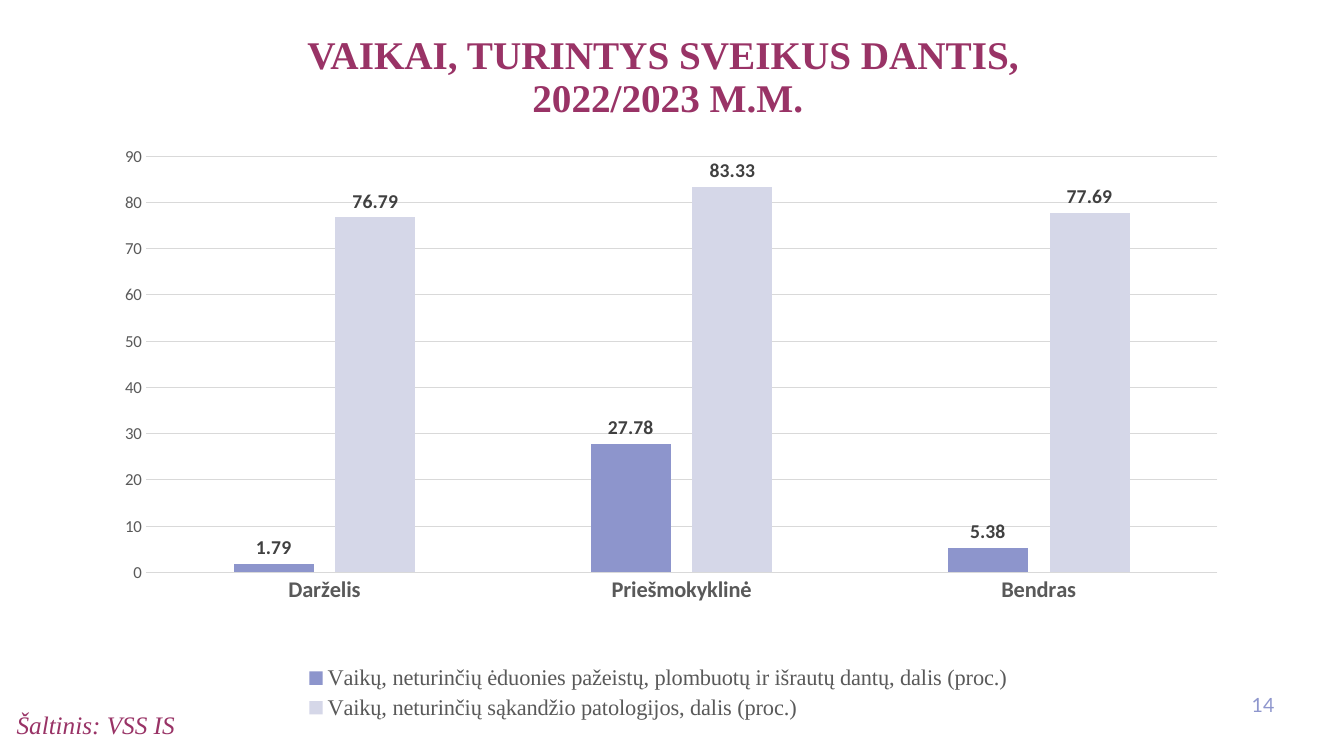
from lxml.etree import SubElement as Sub
from pptx import Presentation
from pptx.chart.data import CategoryChartData as Data
from pptx.dml.color import RGBColor as Rgb
from pptx.enum.chart import XL_CHART_TYPE as Kind, XL_LABEL_POSITION as Spot
from pptx.enum.chart import XL_LEGEND_POSITION as Side, XL_TICK_MARK as Tick
from pptx.enum.text import MSO_ANCHOR as Anchor, PP_ALIGN as Align
from pptx.oxml.ns import qn
from pptx.util import Inches, Pt

HUES = {"plum": "993366", "blue": "8D95CC", "pale": "D5D7E8", "page": "8E96CD",
        "grey": "595959", "dark": "404040", "rule": "D9D9D9", "black": "000000"}
SERIF, SANS = "Times New Roman", "Calibri"
COLS, ROWS = 160, 90


class Deck:
    def __init__(self):
        self.file = Presentation()
        self.file.slide_width, self.file.slide_height = Inches(13.33), Inches(7.5)
        self.slide = self.file.slides.add_slide(self.file.slide_layouts[6])

    def area(self, col, row, wide, high):
        across = self.file.slide_width / COLS
        down = self.file.slide_height / ROWS
        return [round(n) for n in (col * across, row * down, wide * across, high * down)]

    def style(self, font, face, size, hue, bold=False, italic=False):
        font.name, font.size, font.bold, font.italic = face, Pt(size), bold, italic
        font.color.rgb = Rgb.from_string(HUES[hue])

    def rule(self, line):
        line.color.rgb = Rgb.from_string(HUES["rule"])
        line.width = Pt(0.75)

    def text(self, box, words, look, align=Align.LEFT, anchor=Anchor.TOP, lead=1.0, **more):
        frame = self.slide.shapes.add_textbox(*self.area(*box)).text_frame
        frame.word_wrap = True
        frame.vertical_anchor = anchor
        frame.text = words
        for para in frame.paragraphs:
            para.alignment, para.line_spacing = align, lead
            for run in para.runs:
                self.style(run.font, *look, **more)

    def bars(self, box, cats, rows, plot):
        data = Data()
        data.categories = cats
        for name, _, vals in rows:
            data.add_series(name, vals)
        chart = self.slide.shapes.add_chart(Kind.COLUMN_CLUSTERED, *self.area(*box), data).chart
        self.style(chart.font, SANS, 10, "black")
        chart.has_title = False
        chart.has_legend = True
        chart.legend.position = Side.BOTTOM
        chart.legend.include_in_layout = False
        self.style(chart.legend.font, SERIF, 16, "grey")
        self.axes(chart)
        group = chart.plots[0]
        group.gap_width, group.overlap, group.vary_by_categories = 219, -27, False
        for part, (_, hue, _) in zip(group.series, rows):
            part.format.fill.solid()
            part.format.fill.fore_color.rgb = Rgb.from_string(HUES[hue])
            part.invert_if_negative = False
            tags = part.data_labels
            tags.show_value = True
            tags.position = Spot.OUTSIDE_END
            self.style(tags.font, SANS, 14, "dark", bold=True)
        self.place(chart, plot)

    def axes(self, chart):
        cat, val = chart.category_axis, chart.value_axis
        for axis in (cat, val):
            axis.major_tick_mark = axis.minor_tick_mark = Tick.NONE
        self.style(cat.tick_labels.font, SANS, 16, "grey", bold=True)
        self.style(val.tick_labels.font, SANS, 12, "grey")
        self.rule(cat.format.line)
        self.rule(val.major_gridlines.format.line)
        val.format.line.fill.background()
        val.minimum_scale, val.maximum_scale, val.major_unit = 0, 90, 10

    def place(self, chart, plot):
        zone = chart.element.find(".//" + qn("c:plotArea"))
        for old in zone.findall(qn("c:layout")):
            zone.remove(old)
        frame = Sub(zone, qn("c:layout"))
        zone.insert(0, frame)
        hand = Sub(frame, qn("c:manualLayout"))
        marks = [("layoutTarget", "inner"), ("xMode", "edge"), ("yMode", "edge")]
        marks += [(key, str(part / 100)) for key, part in zip("xywh", plot)]
        for key, val in marks:
            Sub(hand, qn("c:" + key)).set("val", val)


def main():
    deck = Deck()
    deck.bars((10, 16.3, 136.7, 70), ("Darželis", "Priešmokyklinė", "Bendras"), (
        ("Vaikų, neturinčių ėduonies pažeistų, plombuotų ir išrautų dantų, dalis (proc.)",
         "blue", (1.79, 27.78, 5.38)),
        ("Vaikų, neturinčių sąkandžio patologijos, dalis (proc.)",
         "pale", (76.79, 83.33, 77.69)),
    ), (5.4, 3.3, 93.3, 70.8))
    deck.text((-1, 3.7, 161, 14.3), "VAIKAI, TURINTYS SVEIKUS DANTIS, \v2022/2023 M.M.",
              (SERIF, 28, "plum"), Align.CENTER, lead=0.9, bold=True)
    deck.text((0.8, 83.8, 75.6, 4.5), "Šaltinis: VSS IS", (SERIF, 18, "plum"), italic=True)
    deck.text((146.7, 81.5, 6.2, 4.8), "14", ("Lato", 14, "page"), Align.RIGHT, Anchor.MIDDLE)
    deck.file.save("out.pptx")


if __name__ == "__main__":
    main()
